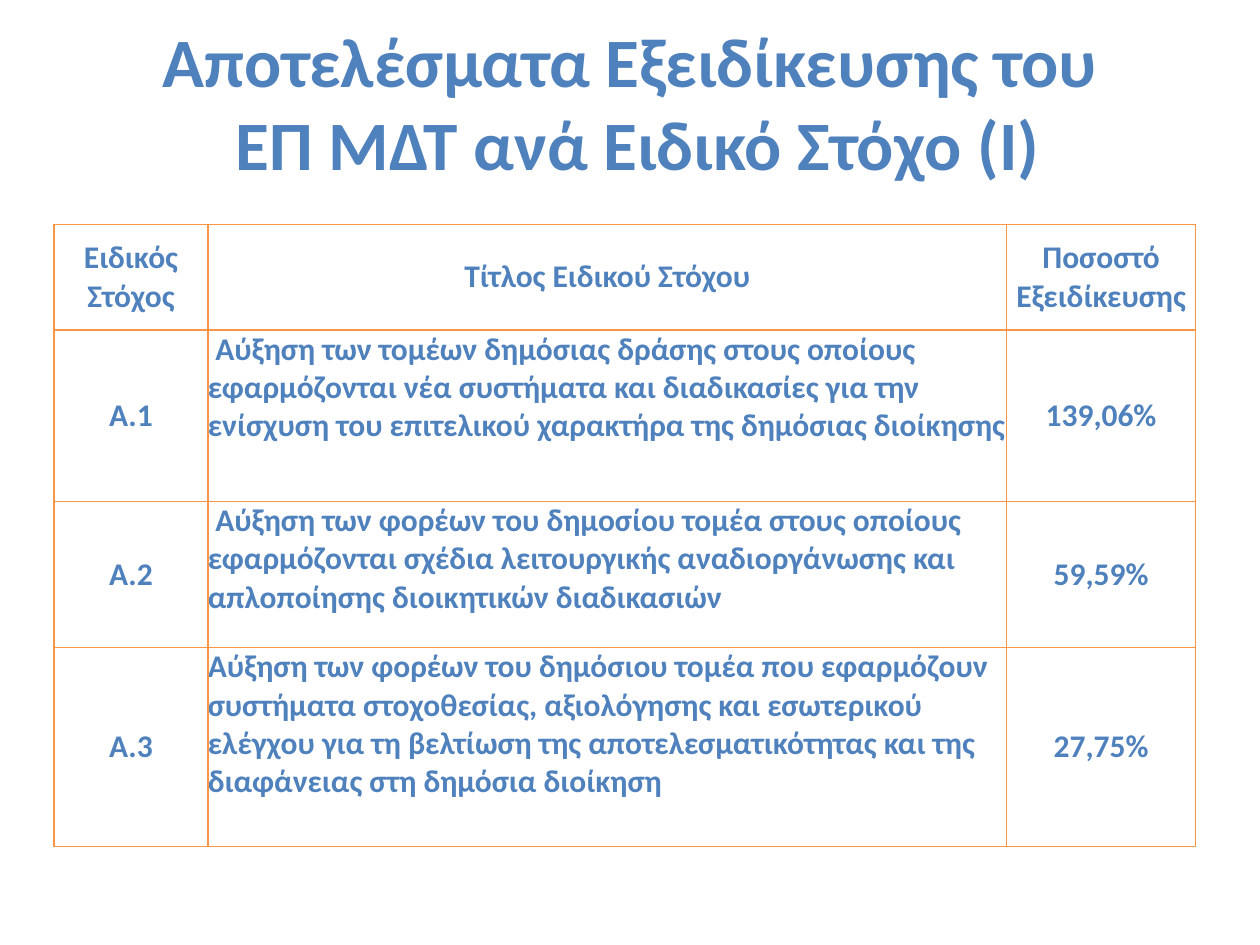
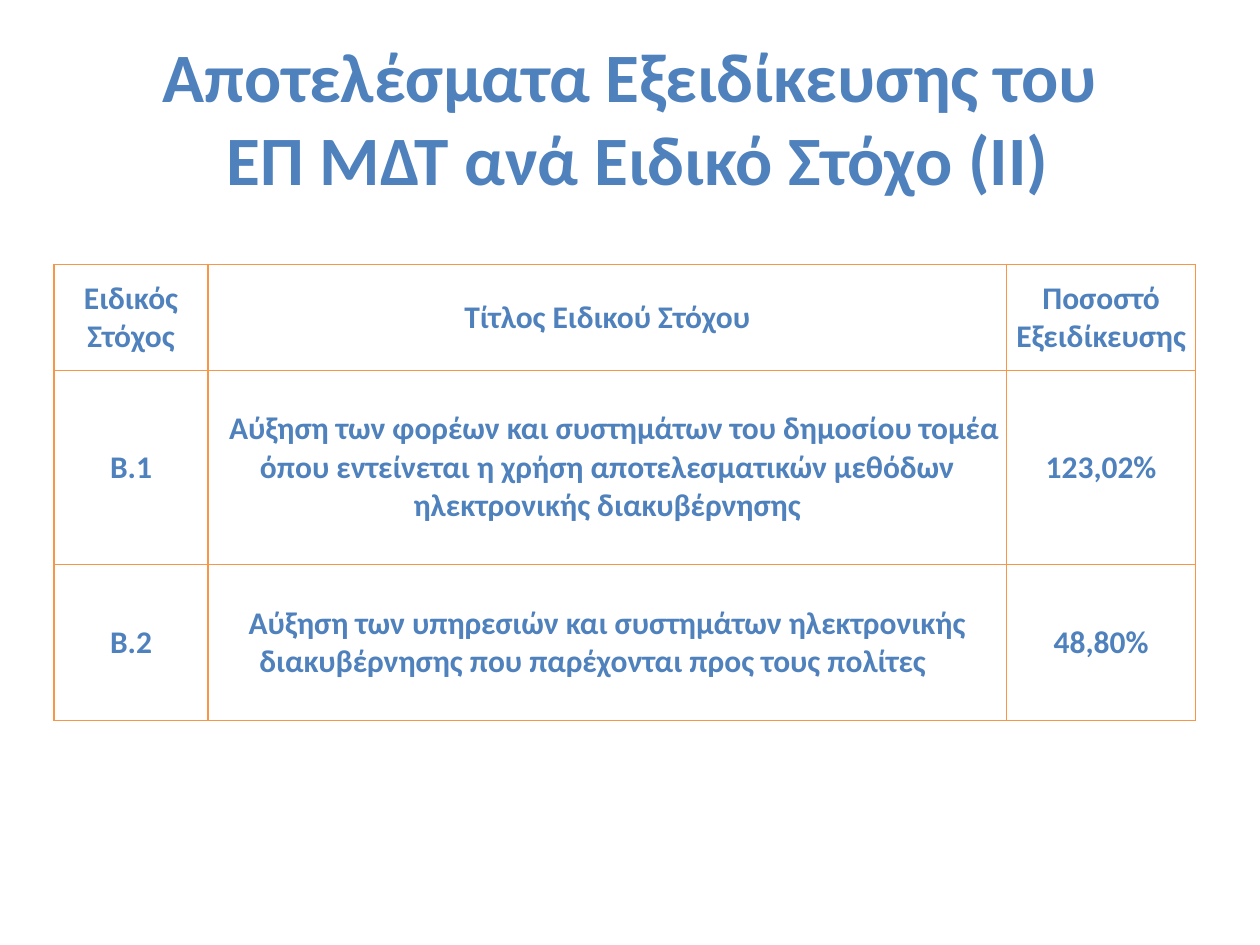
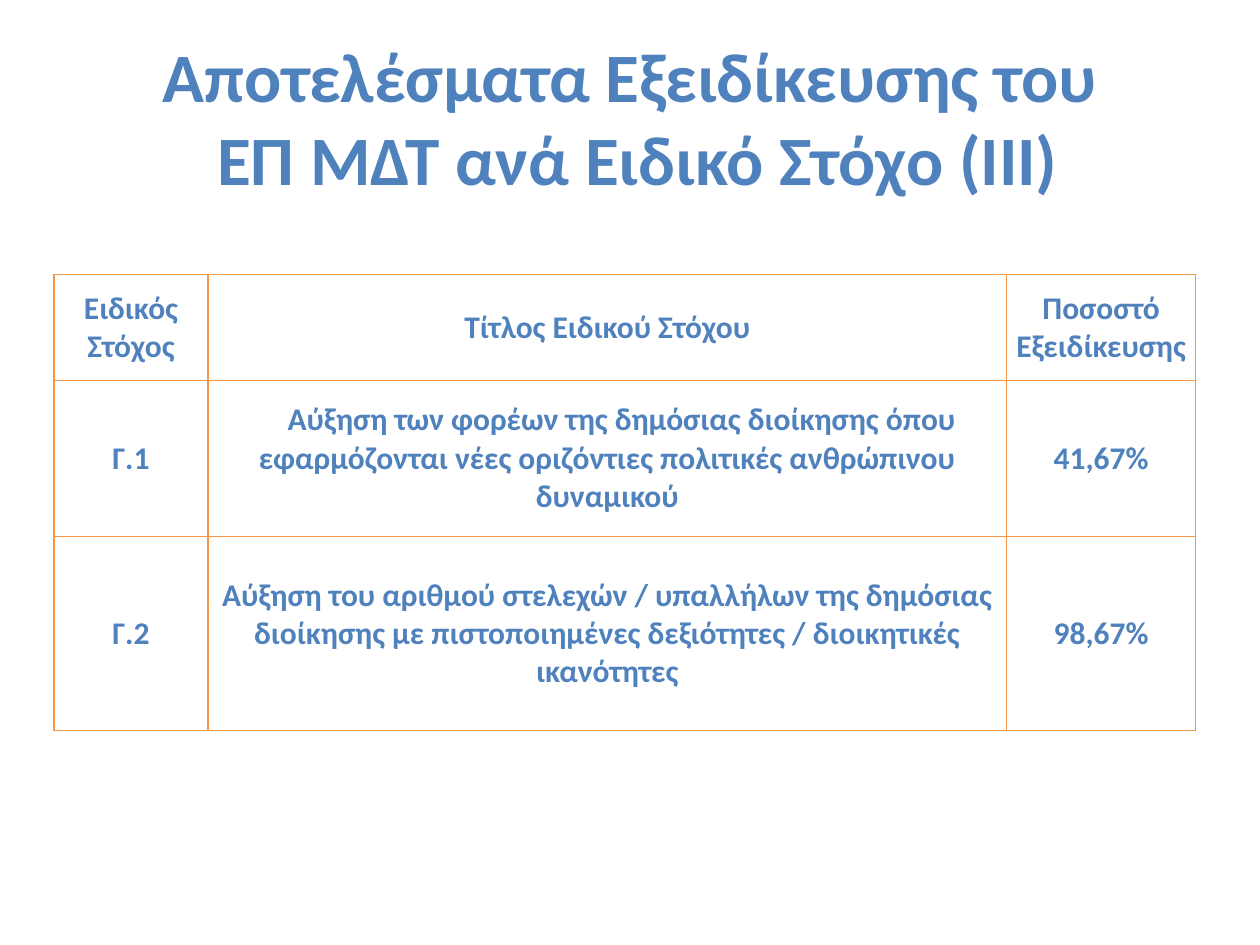
"""Build three slides of specialisation results per specific objective."""
from lxml.etree import SubElement
from pptx import Presentation
from pptx.dml.color import RGBColor
from pptx.enum.text import MSO_ANCHOR, MSO_AUTO_SIZE, PP_ALIGN
from pptx.oxml.ns import qn
from pptx.util import Inches, Pt

HEADLINE = ("Αποτελέσματα Εξειδίκευσης του", " ΕΠ ΜΔΤ ανά Ειδικό Στόχο ({})")
COLUMNS = (("Ειδικός Στόχος", 1.22), ("Τίτλος Ειδικού Στόχου", 6.34), ("Ποσοστό Εξειδίκευσης", 1.5))
SECTIONS = [
    {"number": "Ι", "title_height": 1.01, "top": 1.78, "centred": False, "goals": [
        {"code": "Α.1", "share": "139,06%", "height": 1.36, "indent": 0.06,
         "goal": "Αύξηση των τομέων δημόσιας δράσης στους οποίους εφαρμόζονται νέα συστήματα "
                 "και διαδικασίες για την ενίσχυση του επιτελικού χαρακτήρα της δημόσιας διοίκησης"},
        {"code": "Α.2", "share": "59,59%", "height": 1.16, "indent": 0.06,
         "goal": "Αύξηση των φορέων του δημοσίου τομέα στους οποίους εφαρμόζονται σχέδια "
                 "λειτουργικής αναδιοργάνωσης και απλοποίησης διοικητικών διαδικασιών"},
        {"code": "Α.3", "share": "27,75%", "height": 1.58,
         "goal": "Αύξηση των φορέων του δημόσιου τομέα που εφαρμόζουν συστήματα στοχοθεσίας, "
                 "αξιολόγησης και εσωτερικού ελέγχου για τη βελτίωση της αποτελεσματικότητας "
                 "και της διαφάνειας στη δημόσια διοίκηση"},
    ]},
    {"number": "ΙΙ", "title_height": 1.24, "top": 2.1, "centred": True, "goals": [
        {"code": "Β.1", "share": "123,02%", "height": 1.54, "indent": 0.11,
         "goal": "Αύξηση των φορέων και συστημάτων του δημοσίου τομέα όπου εντείνεται η χρήση "
                 "αποτελεσματικών μεθόδων ηλεκτρονικής διακυβέρνησης"},
        {"code": "Β.2", "share": "48,80%", "height": 1.24, "indent": 0.23, "right": 0.23,
         "goal": "Αύξηση των υπηρεσιών και συστημάτων ηλεκτρονικής διακυβέρνησης "
                 "που παρέχονται προς τους πολίτες"},
    ]},
    {"number": "ΙΙΙ", "title_height": 1.24, "top": 2.18, "centred": True, "goals": [
        {"code": "Γ.1", "share": "41,67%", "height": 1.24, "indent": 0.23,
         "goal": "Αύξηση των φορέων της δημόσιας διοίκησης όπου εφαρμόζονται νέες οριζόντιες "
                 "πολιτικές ανθρώπινου δυναμικού"},
        {"code": "Γ.2", "share": "98,67%", "height": 1.54,
         "goal": "Αύξηση του αριθμού στελεχών / υπαλλήλων της δημόσιας διοίκησης "
                 "με πιστοποιημένες δεξιότητες / διοικητικές ικανότητες"},
    ]},
]
BLUE, ORANGE, WHITE = "4F81BD", "F79646", "FFFFFF"
FONT, TITLE_SIZE, CELL_SIZE = "Calibri", 39.6, 18
TABLE_LEFT, HEADER_HEIGHT = 0.43, 0.84
TITLE_LEFT, TITLE_TOP, TITLE_WIDTH = 0.5, 0.3, 9


def colour(code):
    return RGBColor.from_string(code)


def add_run(paragraph, words, size):
    run = paragraph.add_run()
    run.text = words
    run.font.name, run.font.size, run.font.bold = FONT, Pt(size), True
    run.font.color.rgb = colour(BLUE)


def add_title(slide, section):
    title = slide.shapes.title
    title.left, title.top = Inches(TITLE_LEFT), Inches(TITLE_TOP)
    title.width, title.height = Inches(TITLE_WIDTH), Inches(section["title_height"])
    frame = title.text_frame
    frame.word_wrap, frame.auto_size = True, MSO_AUTO_SIZE.NONE
    frame.vertical_anchor = MSO_ANCHOR.MIDDLE
    paragraph = frame.paragraphs[0]
    paragraph.alignment = PP_ALIGN.CENTER
    first_line, second_line = HEADLINE
    add_run(paragraph, first_line, TITLE_SIZE)
    paragraph.add_line_break()
    add_run(paragraph, second_line.format(section["number"]), TITLE_SIZE)


def add_borders(cell):
    properties = cell._tc.get_or_add_tcPr()
    for side in ("lnL", "lnR", "lnT", "lnB"):
        line = SubElement(properties, qn(f"a:{side}"), w=str(Pt(1)))
        SubElement(SubElement(line, qn("a:solidFill")), qn("a:srgbClr"), val=ORANGE)


def fill_cell(cell, words, centred=True, indent=0, right=0):
    cell.margin_left = cell.margin_right = cell.margin_top = cell.margin_bottom = 0
    cell.vertical_anchor = MSO_ANCHOR.MIDDLE if centred else MSO_ANCHOR.TOP
    add_borders(cell)
    cell.fill.solid()
    cell.fill.fore_color.rgb = colour(WHITE)
    paragraph = cell.text_frame.paragraphs[0]
    paragraph.alignment = PP_ALIGN.CENTER if centred else PP_ALIGN.LEFT
    spacing = paragraph._p.get_or_add_pPr()
    spacing.set("marR", str(Inches(right)))
    spacing.set("indent", str(Inches(indent)))
    add_run(paragraph, words, CELL_SIZE)


def add_goals(slide, section):
    goals = section["goals"]
    heights = [HEADER_HEIGHT] + [goal["height"] for goal in goals]
    widths = [width for _, width in COLUMNS]
    table = slide.shapes.add_table(
        len(heights), len(widths), Inches(TABLE_LEFT), Inches(section["top"]),
        Inches(sum(widths)), Inches(sum(heights))).table
    table.first_row = table.horz_banding = False
    for row, height in zip(table.rows, heights):
        row.height = Inches(height)
    for index, (heading, width) in enumerate(COLUMNS):
        table.columns[index].width = Inches(width)
        fill_cell(table.cell(0, index), heading)
    for index, goal in enumerate(goals, 1):
        fill_cell(table.cell(index, 0), goal["code"])
        fill_cell(table.cell(index, 1), goal["goal"], section["centred"],
                  goal.get("indent", 0), goal.get("right", 0))
        fill_cell(table.cell(index, 2), goal["share"])


def main():
    deck = Presentation()
    deck.slide_width, deck.slide_height = Inches(10), Inches(7.5)
    for section in SECTIONS:
        slide = deck.slides.add_slide(deck.slide_layouts[5])
        add_title(slide, section)
        add_goals(slide, section)
    deck.save("out.pptx")


if __name__ == "__main__":
    main()
